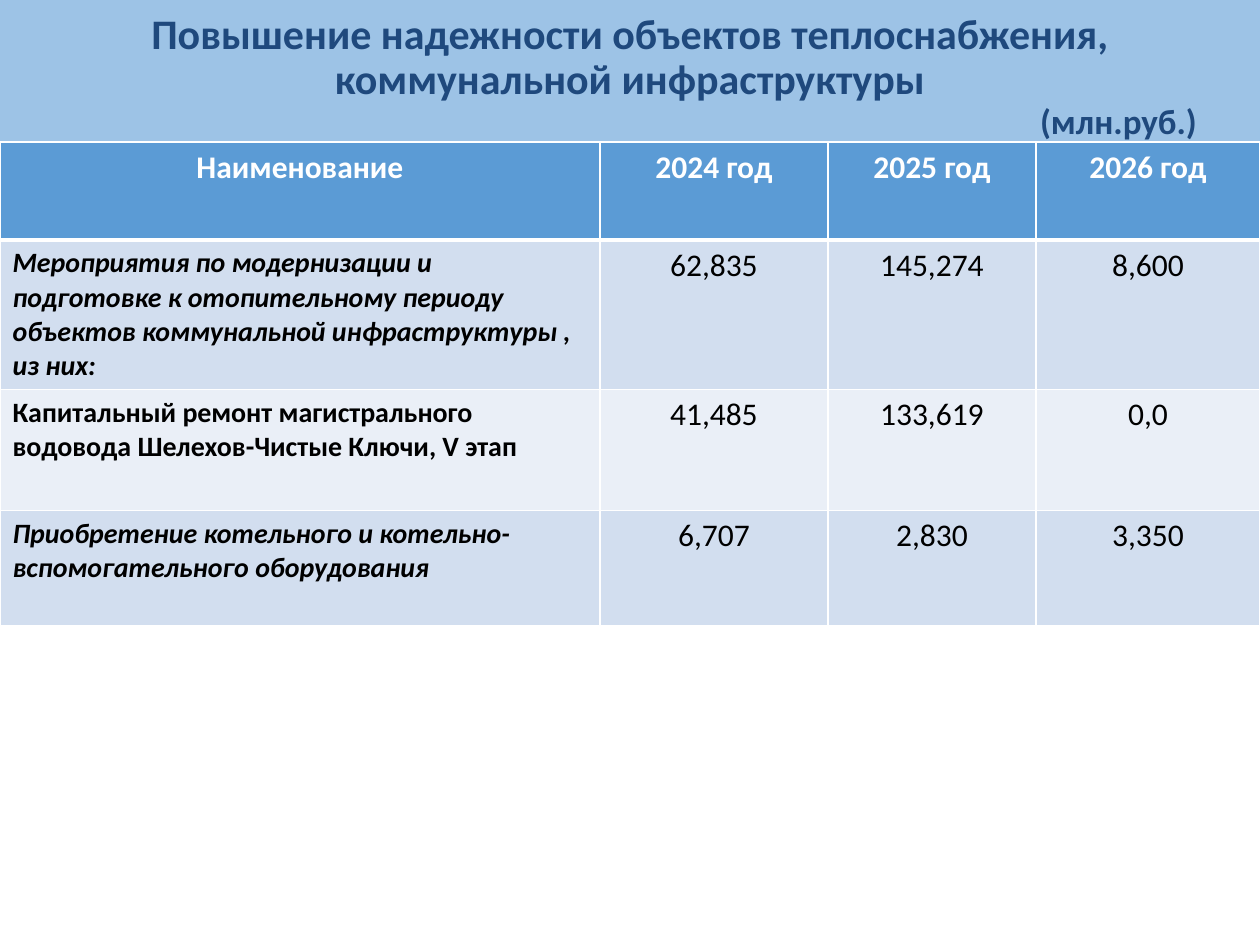
"""Build a slide with a table of heat supply spending by year."""
from lxml.etree import SubElement
from pptx import Presentation
from pptx.dml.color import RGBColor as Rgb
from pptx.enum.shapes import MSO_SHAPE as Shape
from pptx.enum.text import MSO_ANCHOR as Anchor, PP_ALIGN as Align
from pptx.oxml.ns import qn
from pptx.util import Pt

TITLE = "Повышение надежности объектов теплоснабжения, коммунальной инфраструктуры"
UNIT = "(млн.руб.)"
HEAD = ("Наименование", "2024 год", "2025 год", "2026 год")
ROWS = [
    ("Мероприятия по модернизации и подготовке к отопительному периоду "
     "объектов коммунальной инфраструктуры , из них:",
     "62,835", "145,274", "8,600"),
    ("Капитальный ремонт магистрального водовода Шелехов-Чистые Ключи, V этап",
     "41,485", "133,619", "0,0"),
    ("Приобретение котельного и котельно-вспомогательного оборудования",
     "6,707", "2,830", "3,350"),
]
COLS = (600, 228, 208, 224)
HIGH = (98, 149, 121, 115)
WIDE, TALL, BAND, TOP, SIDE = 1260, 945, 155, 142, 63
THEME = {
    "font": "Calibri", "band": "9DC3E6", "title": "1F497D", "head": "5B9BD5",
    "odd": "D2DEEF", "even": "EAEFF7", "white": "FFFFFF", "black": "000000",
    "big": 24, "unit": 20, "cell": 18, "name": 16,
}


def px(n):
    return n * 914400 // 126


def paint(item, key):
    item.fill.solid()
    item.fill.fore_color.rgb = Rgb.from_string(THEME[key])


def write(para, text, size, color, align, bold=True, italic=False):
    para.alignment = align
    run = para.add_run()
    run.text = text
    look = {"name": THEME["font"], "size": Pt(THEME[size]),
            "bold": bold, "italic": italic}
    for key, val in look.items():
        setattr(run.font, key, val)
    run.font.color.rgb = Rgb.from_string(THEME[color])


def edge(cell, base):
    props = cell._tc.get_or_add_tcPr()
    for spot, (side, width) in enumerate(zip("LRTB", (1, 1, 1, base))):
        line = SubElement(props, qn(f"a:ln{side}"), w=str(Pt(width)))
        fill = SubElement(line, qn("a:solidFill"))
        SubElement(fill, qn("a:srgbClr"), val=THEME["white"])
        props.insert(spot, line)


def add_title(slide):
    band = slide.shapes.add_shape(Shape.RECTANGLE, 0, 0, px(WIDE), px(BAND))
    band.shadow.inherit = False
    band.line.fill.background()
    paint(band, "band")
    frame = band.text_frame
    look = {"word_wrap": True, "vertical_anchor": Anchor.MIDDLE,
            "margin_left": px(SIDE), "margin_right": px(SIDE)}
    for key, val in look.items():
        setattr(frame, key, val)
    write(frame.paragraphs[0], TITLE, "big", "title", Align.CENTER)
    write(frame.add_paragraph(), UNIT, "unit", "title", Align.RIGHT)
    for para in frame.paragraphs:
        para.line_spacing = 0.9


def add_grid(slide):
    data = [HEAD, *ROWS]
    grid = slide.shapes.add_table(len(data), len(HEAD), 0, px(TOP),
                                  px(WIDE), px(sum(HIGH))).table
    for col, width in zip(grid.columns, COLS):
        col.width = px(width)
    for r, (row, height) in enumerate(zip(data, HIGH)):
        grid.rows[r].height = px(height)
        tint = "head" if r == 0 else "odd" if r % 2 else "even"
        for c, text in enumerate(row):
            cell = grid.cell(r, c)
            paint(cell, tint)
            edge(cell, 1 if r else 3)
            name = r > 0 and c == 0
            write(cell.text_frame.paragraphs[0], text,
                  "name" if name else "cell", "black" if r else "white",
                  Align.LEFT if name else Align.CENTER,
                  bold=name or r == 0, italic=name and r % 2 == 1)


def main():
    deck = Presentation()
    deck.slide_width, deck.slide_height = px(WIDE), px(TALL)
    slide = deck.slides.add_slide(deck.slide_layouts[6])
    add_title(slide)
    add_grid(slide)
    deck.save("out.pptx")


if __name__ == "__main__":
    main()
